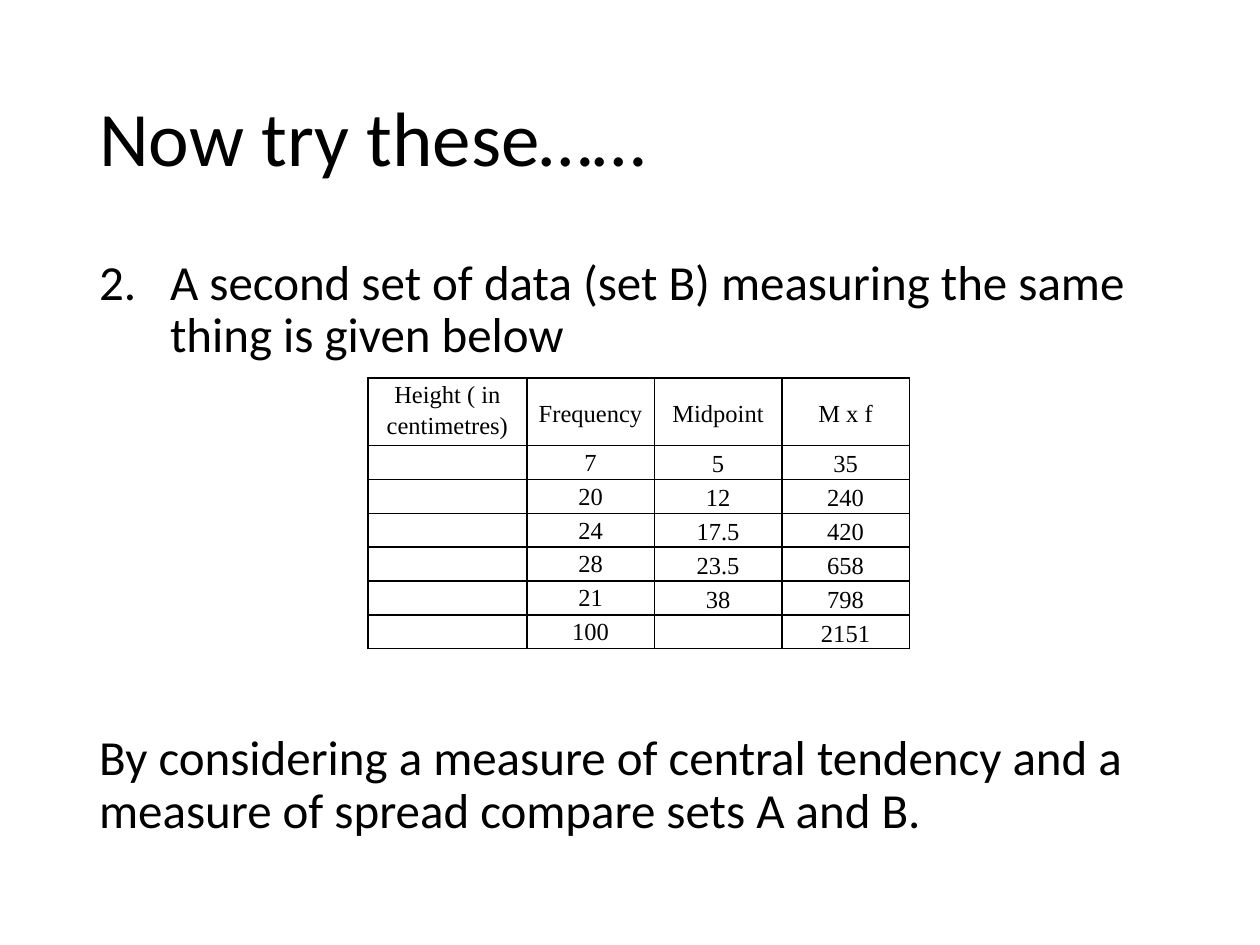
from lxml.etree import SubElement
from pptx import Presentation
from pptx.dml.color import RGBColor
from pptx.enum.text import MSO_ANCHOR, PP_ALIGN
from pptx.oxml.ns import qn
from pptx.util import Cm, Pt

COLOURS = {"ink": "000000", "paper": "FFFFFF"}


def add_run(paragraph, text, font, size):
    run = paragraph.add_run()
    run.text = text
    run.font.name = font
    run.font.size = Pt(size)
    run.font.color.rgb = RGBColor.from_string(COLOURS["ink"])


def add_border(cell, side):
    line = SubElement(cell._tc.get_or_add_tcPr(), qn(f"a:{side}"), w=str(Pt(1)))
    fill = SubElement(line, qn("a:solidFill"))
    SubElement(fill, qn("a:srgbClr"), val=COLOURS["ink"])


deck = Presentation()
deck.slide_width, deck.slide_height = Cm(25.4), Cm(19.05)
slide = deck.slides.add_slide(deck.slide_layouts[6])
slide.background.fill.solid()
slide.background.fill.fore_color.rgb = RGBColor.from_string(COLOURS["paper"])

title = slide.shapes.add_textbox(Cm(1.75), Cm(1.01), Cm(21.9), Cm(3.68)).text_frame
title.word_wrap = True
title.vertical_anchor = MSO_ANCHOR.MIDDLE
heading = title.paragraphs[0]
heading.line_spacing = 0.9
add_run(heading, "Now try these……", "Calibri", 44)

body = slide.shapes.add_textbox(Cm(1.75), Cm(5.07), Cm(21.9), Cm(12.09)).text_frame
body.word_wrap = True
question = body.paragraphs[0]
numbering = question._p.get_or_add_pPr()
numbering.set("marL", str(Cm(1.43)))
numbering.set("indent", str(Cm(-1.43)))
SubElement(numbering, qn("a:buFont"), typeface="+mj-lt")
SubElement(numbering, qn("a:buAutoNum"), type="arabicPeriod", startAt="2")
question.line_spacing = 0.9
add_run(question, "A second set of data (set B) measuring the same thing is given below", "Calibri", 28)

task = body.add_paragraph()
task.line_spacing = 0.9
task.space_before = Pt(211)
add_run(
    task,
    "By considering a measure of central tendency and a measure of spread compare sets A and B.",
    "Calibri",
    28,
)

records = [
    ["Height ( in centimetres)", "Frequency", "Midpoint", "M x f"],
    ["", "7", "5", "35"],
    ["", "20", "12", "240"],
    ["", "24", "17.5", "420"],
    ["", "28", "23.5", "658"],
    ["", "21", "38", "798"],
    ["", "100", "", "2151"],
]
column_widths = [3.2] + [2.57] * 3
row_heights = [1.25] + [0.63] * 5 + [0.68]
frequencies = slide.shapes.add_table(
    len(records), len(column_widths), Cm(7.42), Cm(7.62), Cm(sum(column_widths)), Cm(sum(row_heights))
).table
frequencies.first_row = False
frequencies.horz_banding = False
for column, width in zip(frequencies.columns, column_widths):
    column.width = Cm(width)

for row_index, (record, height) in enumerate(zip(records, row_heights)):
    frequencies.rows[row_index].height = Cm(height)
    for column_index, value in enumerate(record):
        cell = frequencies.cell(row_index, column_index)
        cell.margin_left = cell.margin_right = Cm(0.18)
        cell.margin_top = cell.margin_bottom = 0
        first_column = column_index == 0
        frequency_value = column_index == 1 and row_index > 0
        cell.vertical_anchor = MSO_ANCHOR.TOP if first_column or frequency_value else MSO_ANCHOR.MIDDLE
        for side in ("lnL", "lnR", "lnT", "lnB"):
            add_border(cell, side)
        cell.fill.background()
        entry = cell.text_frame.paragraphs[0]
        entry.alignment = PP_ALIGN.CENTER
        if value:
            entry.line_spacing = 1.15
            add_run(entry, value, "Times New Roman", 14)
        else:
            SubElement(entry._p, qn("a:endParaRPr"), sz="1400")

deck.save("out.pptx")
